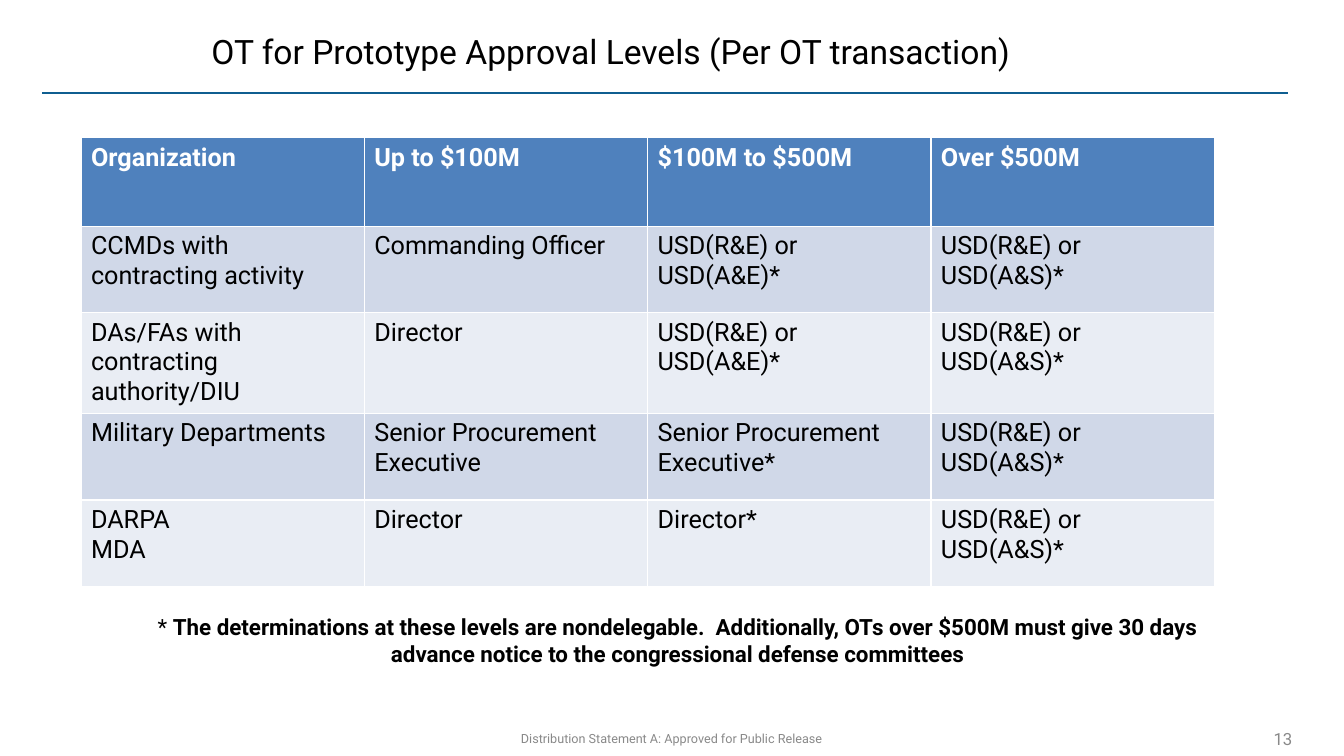
from pptx import Presentation
from pptx.dml.color import RGBColor
from pptx.enum import shapes, text
from pptx.oxml.ns import qn
from pptx.util import Cm, Pt

# Content
TITLE = "OT for Prototype Approval Levels (Per OT transaction)"
RD_AE = "USD(R&E) or USD(A&E)*"
RD_AS = "USD(R&E) or USD(A&S)*"
ROWS = [
    ("Organization", "Up to $100M", "$100M to $500M", "Over $500M"),
    ("CCMDs with contracting activity", "Commanding Officer", RD_AE, RD_AS),
    ("DAs/FAs with contracting authority/DIU", "Director", RD_AE, RD_AS),
    ("Military Departments", "Senior Procurement Executive",
     "Senior Procurement Executive*", RD_AS),
    ("DARPA\nMDA", "Director", "Director*", RD_AS),
]
NOTE = ("The determinations at these levels are nondelegable.  Additionally, "
        "OTs over $500M must give 30 days advance notice to the congressional "
        "defense committees")
FOOTER = "Distribution Statement A: Approved for Public Release"
PAGE = "13"

# Style
FONT = "Roboto"
BLACK, WHITE, GREY, RULE = "000000", "FFFFFF", "898989", "0F5E90"
HEAD_FILL, BANDS = "4F81BD", ("E9EDF4", "D0D8E8")
HEAD_H, ROW_H, COL_W = Cm(2.23), Cm(2.18), Cm(7.14)
ALIGN, ANCHOR = text.PP_ALIGN, text.MSO_ANCHOR


def rgb(code):
    return RGBColor.from_string(code)


def style(r, size, color, bold=False):
    r.font.name, r.font.size, r.font.bold = FONT, Pt(size), bold
    r.font.color.rgb = rgb(color)


def add_text(s, box, words, size, color, align=ALIGN.LEFT, anchor=ANCHOR.MIDDLE):
    tf = s.shapes.add_textbox(*map(Cm, box)).text_frame
    tf.word_wrap, tf.vertical_anchor = True, anchor
    p = tf.paragraphs[0]
    p.text, p.alignment = words, align
    style(p.runs[0], size, color)
    return p


prs = Presentation()
prs.slide_width, prs.slide_height = Cm(33.87), Cm(19.05)
s = prs.slides.add_slide(prs.slide_layouts[6])

# Title and rule
rule = s.shapes.add_connector(shapes.MSO_CONNECTOR.STRAIGHT,
                              Cm(1.07), Cm(2.34), Cm(32.46), Cm(2.34))
rule.line.color.rgb, rule.line.width = rgb(RULE), Pt(1.75)
sp_pr = rule._element.spPr
sp_pr.append(sp_pr.makeelement(qn("a:effectLst"), {}))
add_text(s, (5.08, 0.43, 27.38, 1.7), TITLE, 24, BLACK)

# Approval table
n_rows, n_cols = len(ROWS), len(ROWS[0])
table = s.shapes.add_table(n_rows, n_cols, Cm(2.04), Cm(3.47), COL_W * n_cols,
                           HEAD_H + ROW_H * (n_rows - 1)).table
for col in table.columns:
    col.width = COL_W
for i, row in enumerate(ROWS):
    head = i == 0
    table.rows[i].height = HEAD_H if head else ROW_H
    for j, words in enumerate(row):
        cell = table.cell(i, j)
        cell.fill.solid()
        cell.fill.fore_color.rgb = rgb(HEAD_FILL if head else BANDS[i % 2])
        cell.text_frame.text = words
        for p in cell.text_frame.paragraphs:
            style(p.runs[0], 18, WHITE if head else BLACK, head)

# Note below the table
p = add_text(s, (3.53, 15.32, 27.1, 1.63), "* ", 16, BLACK, ALIGN.CENTER, ANCHOR.TOP)
r = p.add_run()
r.text = NOTE
style(r, 16, BLACK, True)

# Footer
add_text(s, (4.93, 18.19, 23.98, 0.84), FOOTER, 9, GREY, ALIGN.CENTER)
add_text(s, (30, 18.21, 2.82, 0.81), PAGE, 12, GREY, ALIGN.RIGHT)

prs.save("out.pptx")
